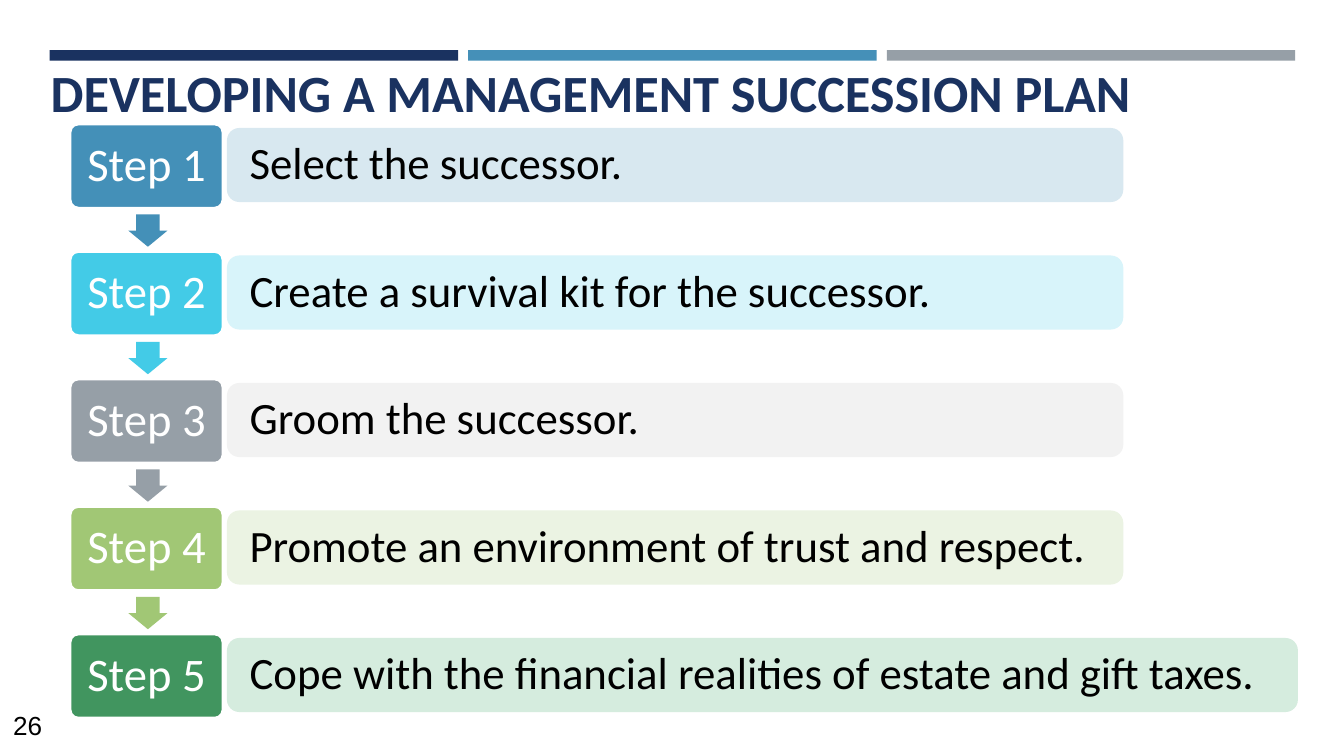
from dataclasses import dataclass

from pptx import Presentation
from pptx import util as u
from pptx.dml.color import RGBColor
from pptx.enum import shapes, text


@dataclass(frozen=True)
class Theme:
    navy: str = "1A3260"
    blue: str = "4590B8"
    gray: str = "969FA7"
    white: str = "FFFFFF"
    black: str = "000000"
    body_font: str = "Calibri"
    number_font: str = "Arial"
    title_size: int = 28
    step_size: int = 25
    body_size: int = 24
    number_size: int = 14
    step_colors: tuple = ("4490B8", "43CBE7", "969FA7", "A1C775", "41955F")
    panel_colors: tuple = ("D8E8F0", "D8F4FA", "F2F2F2", "EBF3E3", "D5ECDE")


class SlideBuilder:
    def __init__(self, slide, theme):
        self.slide = slide
        self.theme = theme

    def shape(self, kind, area, fill, adjustments=(), outline=None):
        shape = self.slide.shapes.add_shape(kind, *map(u.Cm, area))
        shape.shadow.inherit = False
        shape.fill.solid()
        shape.fill.fore_color.rgb = RGBColor.from_string(fill)
        if outline:
            shape.line.color.rgb = RGBColor.from_string(outline)
            shape.line.width = u.Pt(1.75)
        else:
            shape.line.fill.background()
        for index, value in enumerate(adjustments):
            shape.adjustments[index] = value
        return shape

    def add_words(self, box, words, size, color, insets, font=None, bold=False,
                  align=text.PP_ALIGN.LEFT, anchor=text.MSO_ANCHOR.MIDDLE, spacing=0.9):
        frame = box.text_frame
        frame.word_wrap = True
        frame.vertical_anchor = anchor
        frame.margin_left = frame.margin_right = u.Cm(insets[0])
        frame.margin_top = frame.margin_bottom = u.Cm(insets[1])
        para = frame.paragraphs[0]
        para.alignment = align
        para.line_spacing = spacing
        span = para.add_run()
        span.text = words
        span.font.name = font or self.theme.body_font
        span.font.size = u.Pt(size)
        span.font.bold = bold
        span.font.color.rgb = RGBColor.from_string(color)

    def text_box(self, area, words, size, color, insets, **style):
        box = self.slide.shapes.add_textbox(*map(u.Cm, area))
        self.add_words(box, words, size, color, insets,
                       anchor=text.MSO_ANCHOR.TOP, spacing=1.0, **style)

    def bar(self, left, fill):
        self.shape(shapes.MSO_SHAPE.RECTANGLE, (left, 0.95, 7.72, 0.2), fill)

    def step(self, top, words, fill):
        box = self.shape(shapes.MSO_SHAPE.ROUNDED_RECTANGLE, (1.32, top, 2.9, 1.6),
                         fill, (0.1,), self.theme.white)
        self.add_words(box, words, self.theme.step_size, self.theme.white,
                       (0.25, 0.25), align=text.PP_ALIGN.CENTER)

    def arrow(self, top, fill):
        arrow = self.shape(shapes.MSO_SHAPE.RIGHT_ARROW, (2.49, top, 0.61, 0.74),
                           fill, (0.6, 0.5))
        arrow.rotation = 90

    def panel(self, top, width, words, fill):
        box = self.shape(shapes.MSO_SHAPE.ROUNDED_RECTANGLE, (4.29, top, width, 1.4),
                         fill, (0.167,))
        self.add_words(box, words, self.theme.body_size, self.theme.black, (0.36, 0.38))


def main():
    theme = Theme()
    deck = Presentation()
    deck.slide_width, deck.slide_height = u.Cm(25.4), u.Cm(14.29)
    page = SlideBuilder(deck.slides.add_slide(deck.slide_layouts[6]), theme)

    for index, color in enumerate((theme.navy, theme.blue, theme.gray)):
        page.bar(0.94 + index * 7.91, color)
    page.text_box((0, 13.28, 1.22, 0.89), "26", theme.number_size, theme.black,
                  (0.25, 0.13), font=theme.number_font)
    page.text_box((0.71, 0.89, 24.54, 1.6), "DEVELOPING A MANAGEMENT SUCCESSION PLAN",
                  theme.title_size, theme.navy, (0.25, 0.25), bold=True)

    steps = (
        ("Select the successor.", 16.94),
        ("Create a survival kit for the successor.", 16.94),
        ("Groom the successor.", 16.94),
        ("Promote an environment of trust and respect.", 16.94),
        ("Cope with the financial realities of estate and gift taxes.", 20.24),
    )
    for index, (words, width) in enumerate(steps):
        top = 2.34 + index * 2.41
        color = theme.step_colors[index]
        page.step(top, f"Step {index + 1}", color)
        if index < len(steps) - 1:
            page.arrow(top + 1.65, color)
        page.panel(top + 0.08, width, words, theme.panel_colors[index])

    deck.save("out.pptx")


if __name__ == "__main__":
    main()
